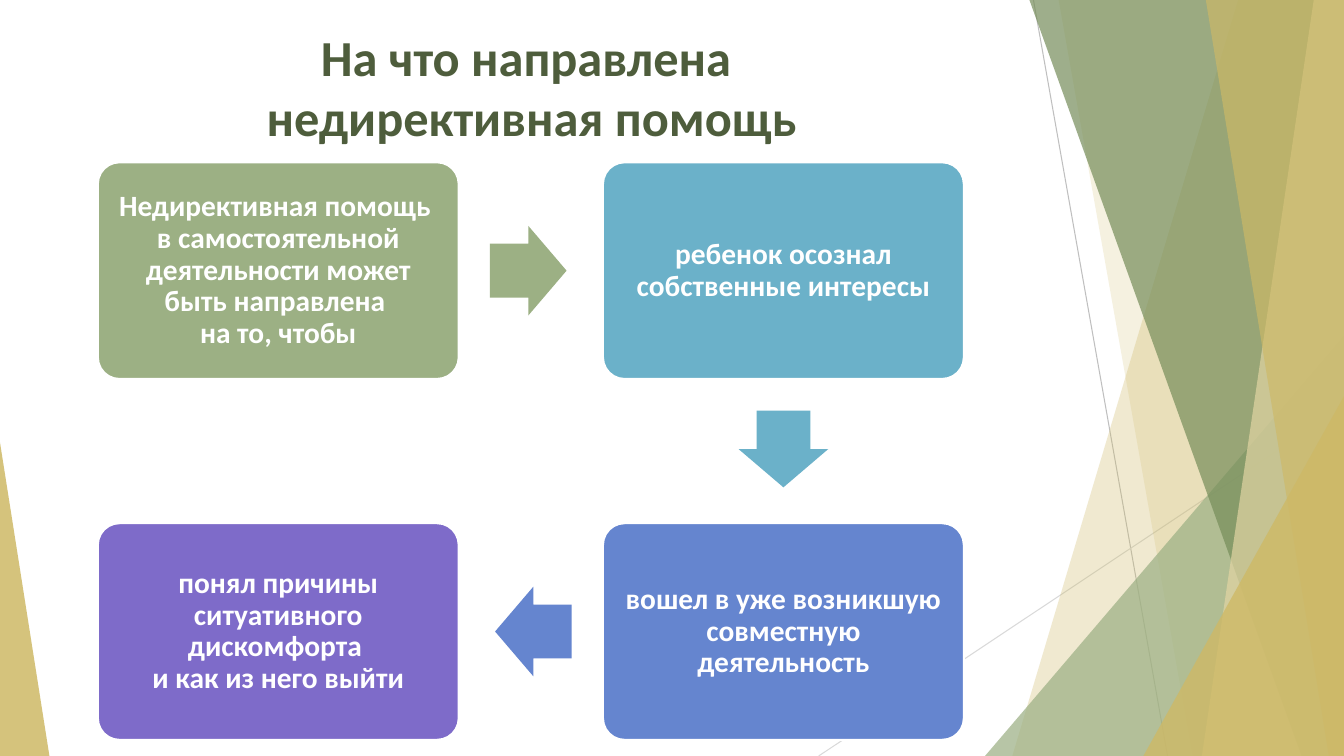
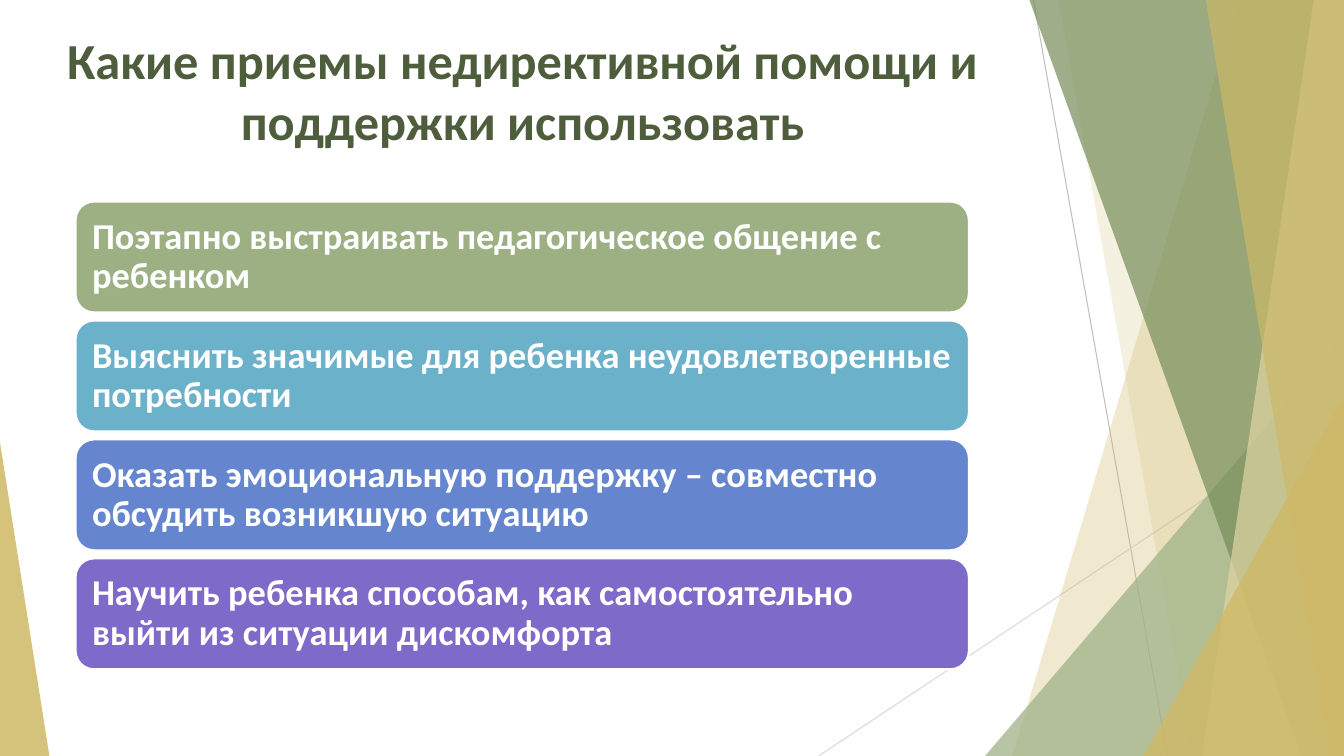
from lxml import etree
from pptx import Presentation
from pptx.dml.color import RGBColor
from pptx.enum import shapes as kinds, text as txt
from pptx.oxml import ns
from pptx.util import Inches, Pt

FONT = "Calibri"
WHITE, DARK, GOLD = "FFFFFF", "4E5D3C", "CEB966"
HUES = ["9CB084", "6BB1C9", "6585CF", "7E6BC9"]
WIDE, HIGH = 13.33, 7.5
KIND = kinds.MSO_SHAPE

# Background lines: start x, start y, end x, end y, colour
LINES = [(10.25, 0, 11.58, HIGH, "BFBFBF"), (WIDE, 4.03, 8.12, HIGH, "D9D9D9")]

# Background facets: colour, opacity in percent, outline
# Bands hold the x of their left edge at top and bottom;
# triangles hold left, top, width, height and apex.
FACETS = [
    (GOLD, 30, (12.28, 10.04)),
    (GOLD, 20, (10.5, 11.83)),
    (HUES[0], 72, (9.77, 3.33, 3.56, 4.17, 1)),
    ("768D5A", 70, (10.21, 12.91)),
    ("E2D5A3", 70, (13.03, 11.92)),
    (GOLD, 65, (11.96, 13.18)),
    (GOLD, 80, (11.34, 3.93, 1.99, 3.57, 1)),
    (GOLD, 85, (0, 4.39, 0.49, 3.11, 0)),
]

TITLES = [
    ("На что направлена \vнедирективная помощь", 0.43, 0.21),
    ("Какие приемы недирективной помощи и поддержки использовать", 0.34, 0.24),
]


def paint(shape, hue, edge=None):
    shape.shadow.inherit = False
    shape.fill.solid()
    shape.fill.fore_color.rgb = RGBColor.from_string(hue)
    if edge:
        shape.line.color.rgb = RGBColor.from_string(edge)
        shape.line.width = Pt(1.5)
    else:
        shape.line.fill.background()


def write(shape, words, size, hue, align, inset=None):
    frame = shape.text_frame
    frame.word_wrap = True
    frame.text = words
    par = frame.paragraphs[0]
    par.alignment = align
    par.font.size = Pt(size)
    for run in par.runs:
        run.font.name = FONT
        run.font.size = Pt(size)
        run.font.bold = True
        run.font.color.rgb = RGBColor.from_string(hue)
    if inset:
        frame.vertical_anchor = txt.MSO_ANCHOR.MIDDLE
        frame.margin_left = frame.margin_right = Inches(inset)
        frame.margin_top = frame.margin_bottom = Inches(inset)
        par.line_spacing = 0.9


deck = Presentation()
deck.slide_width, deck.slide_height = Inches(WIDE), Inches(HIGH)
LEFT, MID = txt.PP_ALIGN.LEFT, txt.PP_ALIGN.CENTER

# Shared background and title
for title, left, top in TITLES:
    slide = deck.slides.add_slide(deck.slide_layouts[6])
    for x1, y1, x2, y2, hue in LINES:
        line = slide.shapes.add_connector(
            kinds.MSO_CONNECTOR.STRAIGHT,
            Inches(x1), Inches(y1), Inches(x2), Inches(y2))
        line.line.color.rgb = RGBColor.from_string(hue)
        line.line.width = Pt(0.75)
        etree.SubElement(line._element.spPr, ns.qn("a:effectLst"))
    for hue, alpha, form in FACETS:
        if len(form) == 2:
            high, low = form
            pen = slide.shapes.build_freeform(Inches(high), 0)
            pen.add_line_segments([
                (Inches(WIDE), 0), (Inches(WIDE), Inches(HIGH)),
                (Inches(low), Inches(HIGH))], close=True)
            facet = pen.convert_to_shape()
        else:
            facet = slide.shapes.add_shape(
                KIND.ISOSCELES_TRIANGLE, *map(Inches, form[:4]))
            facet.adjustments[0] = form[4]
        paint(facet, hue)
        tone = facet._element.spPr.find(".//" + ns.qn("a:srgbClr"))
        etree.SubElement(tone, ns.qn("a:alpha"), val=str(alpha * 1000))
    box = slide.shapes.add_textbox(
        Inches(left), Inches(top), Inches(9.69), Inches(1.4))
    write(box, title, 36, DARK, MID)

aims, ways = deck.slides

# Slide 1: cycle of cards, clockwise from top left
COLS, ROWS = (0.97, 5.98), (1.61, 5.19)
CARDS = [
    (0, 0, "Недирективная помощь \vв самостоятельной деятельности может "
           "быть направлена \vна то, чтобы"),
    (1, 0, "ребенок осознал собственные интересы"),
    (1, 1, "вошел в уже возникшую совместную деятельность"),
    (0, 1, "понял причины ситуативного дискомфорта \vи как из него выйти"),
]
for (col, row, words), hue in zip(CARDS, HUES):
    card = aims.shapes.add_shape(
        KIND.ROUNDED_RECTANGLE, Inches(COLS[col]), Inches(ROWS[row]),
        Inches(3.58), Inches(2.15))
    card.adjustments[0] = 0.1
    paint(card, hue, WHITE)
    write(card, words, 21, WHITE, MID, 0.09)

# Arrows between the cards, each turned a quarter further
ARROWS = [(4.86, 2.24), (7.39, 4.01), (4.91, 5.82)]
for turn, (left, top) in enumerate(ARROWS):
    arrow = aims.shapes.add_shape(
        KIND.RIGHT_ARROW, Inches(left), Inches(top), Inches(0.76), Inches(0.89))
    arrow.adjustments[0], arrow.adjustments[1] = 0.6, 0.5
    arrow.rotation = 90 * turn
    paint(arrow, HUES[turn])

# Slide 2: stack of bars
STEPS = [
    "Поэтапно выстраивать педагогическое общение с ребенком",
    "Выяснить значимые для ребенка неудовлетворенные потребности",
    "Оказать эмоциональную поддержку – совместно обсудить возникшую ситуацию",
    "Научить ребенка способам, как самостоятельно выйти из ситуации дискомфорта",
]
for i, words in enumerate(STEPS):
    bar = ways.shapes.add_shape(
        KIND.ROUNDED_RECTANGLE, Inches(0.75), Inches(2 + 1.18 * i),
        Inches(8.86), Inches(1.1))
    paint(bar, HUES[i], WHITE)
    write(bar, words, 26, WHITE, LEFT, 0.11)

deck.save("out.pptx")
